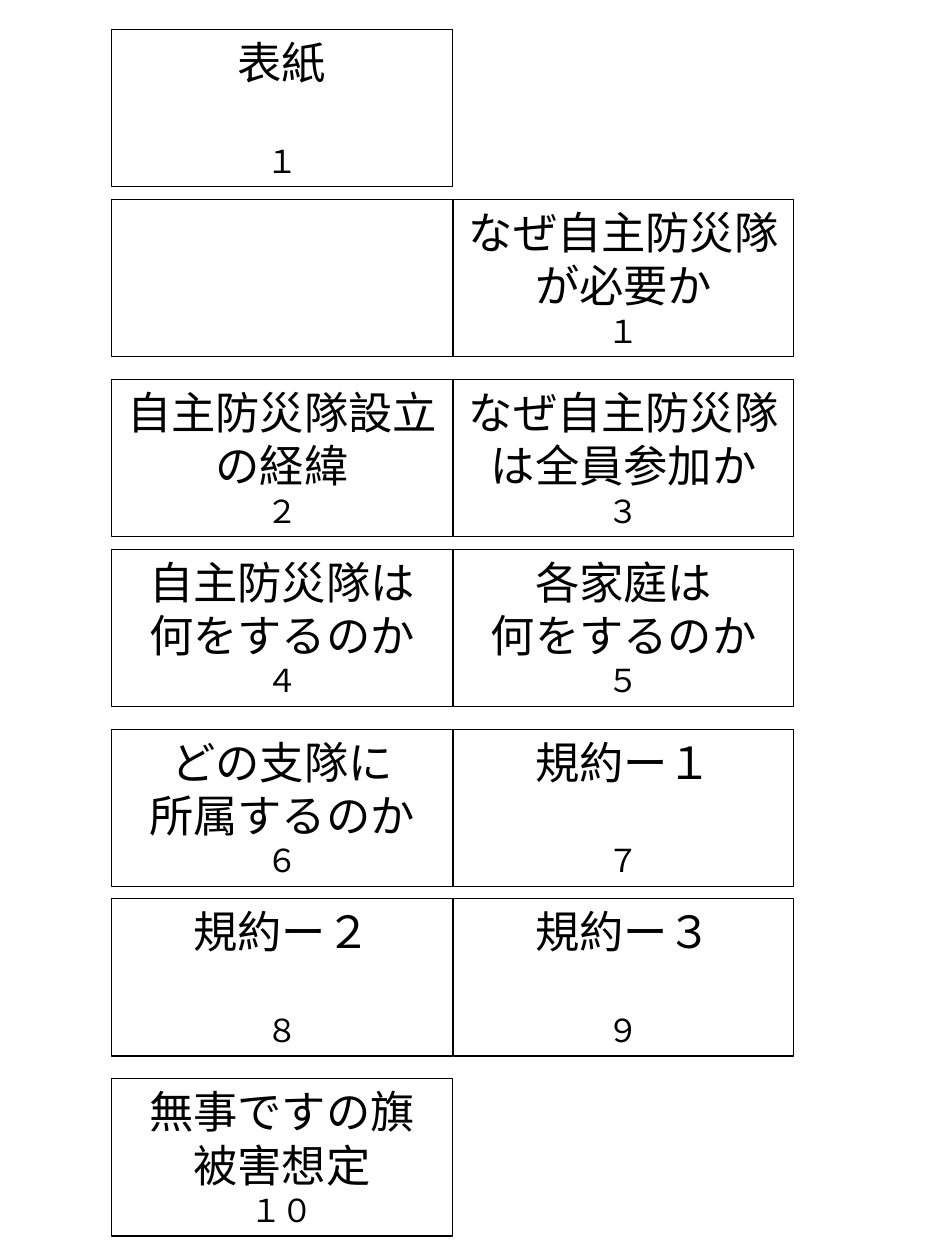
import lxml.etree
import pptx
import pptx.dml.color
import pptx.enum.shapes
import pptx.enum.text
import pptx.oxml.ns
import pptx.util

EMU_PER_PX = 9144
BLACK = pptx.dml.color.RGBColor(0x00, 0x00, 0x00)

PAGE_WIDTH, PAGE_HEIGHT = 827, 1106
LEFT, TOP = 98, 26
BOX_WIDTH, BOX_HEIGHT = 299, 138
COLUMN_STEP = 300
ROW_STEP, SHEET_STEP = 149, 307  # two rows make one sheet

# Each row: left page and right page as (title lines, page number)
BOOKLET = [
    [(["表紙"], "１"), None],
    [([], ""), (["なぜ自主防災隊が必要か"], "１")],
    [(["自主防災隊設立の経緯"], "２"), (["なぜ自主防災隊は全員参加か"], "３")],
    [(["自主防災隊は", "何をするのか"], "４"), (["各家庭は", "何をするのか"], "５")],
    [(["どの支隊に", "所属するのか"], "６"), (["規約ー１"], "７")],
    [(["規約ー２"], "８"), (["規約ー３"], "９")],
    [(["無事ですの旗", "被害想定"], "１０"), None],
]


def px(length):
    return pptx.util.Emu(length * EMU_PER_PX)


class BookletSlide:
    FONT = "Noto Sans CJK JP"
    TITLE_SIZE = 28
    NUMBER_SIZE = 20
    LINE_GAP = 33.6
    CHARS_PER_LINE = 7

    def __init__(self, presentation):
        self.slide = presentation.slides.add_slide(presentation.slide_layouts[6])

    def page_box(self, left, top, title_lines, number):
        box = self.slide.shapes.add_shape(
            pptx.enum.shapes.MSO_SHAPE.RECTANGLE,
            px(left), px(top), px(BOX_WIDTH), px(BOX_HEIGHT))
        box.shadow.inherit = False
        box.fill.background()
        box.line.color.rgb = BLACK
        box.line.width = pptx.util.Pt(0.75)
        if not title_lines:
            return
        frame = box.text_frame
        frame.word_wrap = True
        frame.auto_size = pptx.enum.text.MSO_AUTO_SIZE.SHAPE_TO_FIT_TEXT
        frame.vertical_anchor = pptx.enum.text.MSO_ANCHOR.TOP
        self.centred_text(frame.paragraphs[0], title_lines[0], self.TITLE_SIZE)
        for line in title_lines[1:]:
            self.centred_text(frame.add_paragraph(), line, self.TITLE_SIZE)
        number_paragraph = frame.add_paragraph()
        self.centred_text(number_paragraph, number, self.NUMBER_SIZE)
        if len("".join(title_lines)) <= self.CHARS_PER_LINE:
            number_paragraph.space_before = pptx.util.Pt(self.LINE_GAP)

    def centred_text(self, paragraph, text, size):
        paragraph.alignment = pptx.enum.text.PP_ALIGN.CENTER
        run = paragraph.add_run()
        run.text = text
        run.font.size = pptx.util.Pt(size)
        run.font.name = self.FONT
        run.font.color.rgb = BLACK
        east_asian = lxml.etree.Element(pptx.oxml.ns.qn("a:ea"), typeface=self.FONT)
        run.font._element.find(pptx.oxml.ns.qn("a:latin")).addnext(east_asian)


def main():
    presentation = pptx.Presentation()
    presentation.slide_width = px(PAGE_WIDTH)
    presentation.slide_height = px(PAGE_HEIGHT)
    booklet = BookletSlide(presentation)
    for row, pages in enumerate(BOOKLET):
        sheet, half = divmod(row, 2)
        top = TOP + sheet * SHEET_STEP + half * ROW_STEP
        for column, page in enumerate(pages):
            if page:
                booklet.page_box(LEFT + column * COLUMN_STEP, top, *page)
    presentation.save("out.pptx")


if __name__ == "__main__":
    main()
